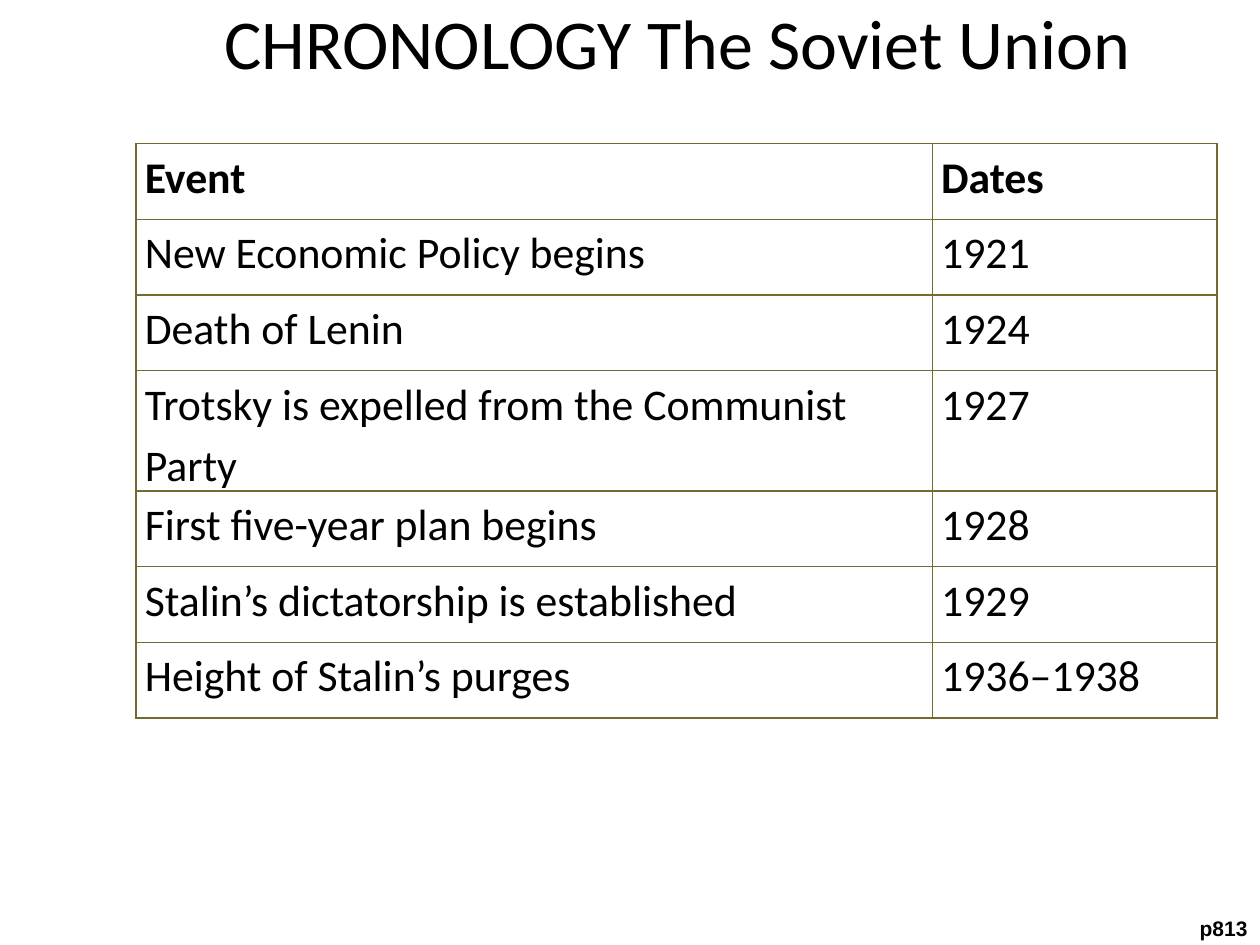
import pptx
import pptx.util
import pptx.dml.color
import pptx.enum.text
import lxml.etree

HUES = {"ink": "000000", "rule": "746833", "page": "FFFFFF"}
ROWS = [
    ("Event", "Dates"),
    ("New Economic Policy begins", "1921"),
    ("Death of Lenin", "1924"),
    ("Trotsky is expelled from the Communist Party", "1927"),
    ("First five-year plan begins", "1928"),
    ("Stalin’s dictatorship is established", "1929"),
    ("Height of Stalin’s purges", "1936–1938"),
]
COLS = (6.32, 2.26)
ROW = 0.6
inch = pptx.util.Inches
align = pptx.enum.text.PP_ALIGN


def style(frame, size, face, bold=False, side=align.LEFT):
    para = frame.paragraphs[0]
    para.alignment = side
    for run in para.runs:
        run.font.size = pptx.util.Pt(size)
        run.font.name = face
        run.font.bold = bold
        run.font.color.rgb = pptx.dml.color.RGBColor.from_string(HUES["ink"])


def border(cell):
    props = cell._tc.get_or_add_tcPr()
    for edge in ("a:lnL", "a:lnR", "a:lnT", "a:lnB"):
        line = lxml.etree.SubElement(props, pptx.oxml.ns.qn(edge), w=str(pptx.util.Pt(1)))
        fill = lxml.etree.SubElement(line, pptx.oxml.ns.qn("a:solidFill"))
        lxml.etree.SubElement(fill, pptx.oxml.ns.qn("a:srgbClr"), val=HUES["rule"])


deck = pptx.Presentation()
deck.slide_width, deck.slide_height = inch(10), inch(7.5)
slide = deck.slides.add_slide(deck.slide_layouts[5])

# Title
title = slide.shapes.title
title.left, title.top, title.width, title.height = map(inch, (0.75, 0.08, 9.25, 0.5))
title.text_frame.text = "CHRONOLOGY The Soviet Union"
title.text_frame.vertical_anchor = pptx.enum.text.MSO_ANCHOR.MIDDLE
title.text_frame.auto_size = pptx.enum.text.MSO_AUTO_SIZE.NONE
style(title.text_frame, 40, "Calibri", side=align.CENTER)

# Page mark in the bottom right corner
mark = slide.shapes.add_textbox(inch(9.37), inch(7.22), inch(0.63), inch(0.3))
mark.text_frame.text = "p813"
mark.text_frame.word_wrap = False
mark.text_frame.auto_size = pptx.enum.text.MSO_AUTO_SIZE.SHAPE_TO_FIT_TEXT
style(mark.text_frame, 12, "Arial", True, align.RIGHT)

# Table of events
table = slide.shapes.add_table(
    len(ROWS), len(COLS), inch(1.08), inch(1.14), inch(sum(COLS)), inch(ROW * len(ROWS))
).table
table.first_row = table.horz_banding = False
for col, width in zip(table.columns, COLS):
    col.width = inch(width)
for r, words in enumerate(ROWS):
    table.rows[r].height = inch(ROW)
    for c, word in enumerate(words):
        cell = table.cell(r, c)
        cell.margin_left = cell.margin_right = inch(0.07)
        cell.margin_top = cell.margin_bottom = 0
        border(cell)
        cell.fill.solid()
        cell.fill.fore_color.rgb = pptx.dml.color.RGBColor.from_string(HUES["page"])
        cell.text_frame.text = word
        cell.text_frame.paragraphs[0].line_spacing = 1.15
        style(cell.text_frame, 25, "Calibri", bold=r == 0)

deck.save("out.pptx")
